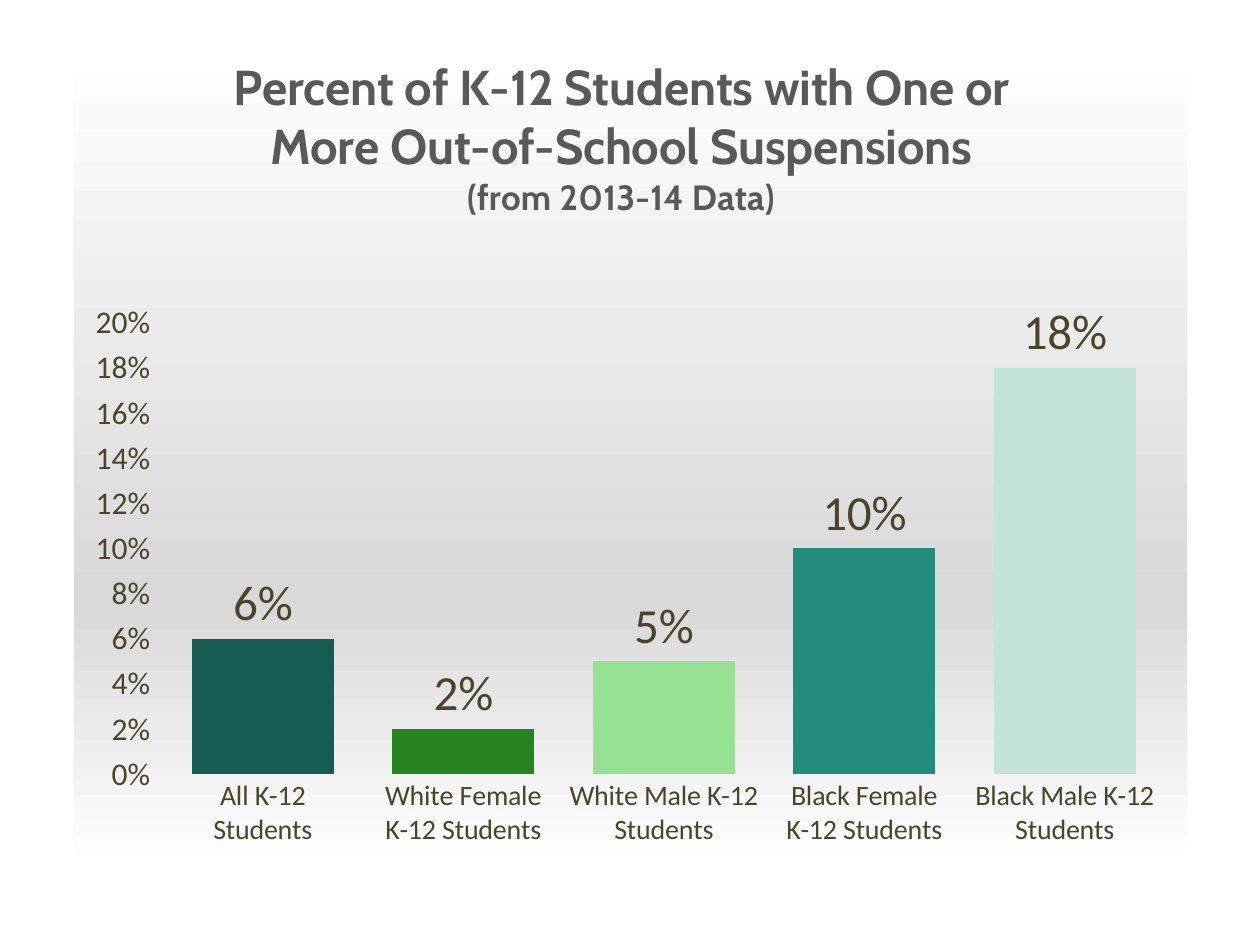
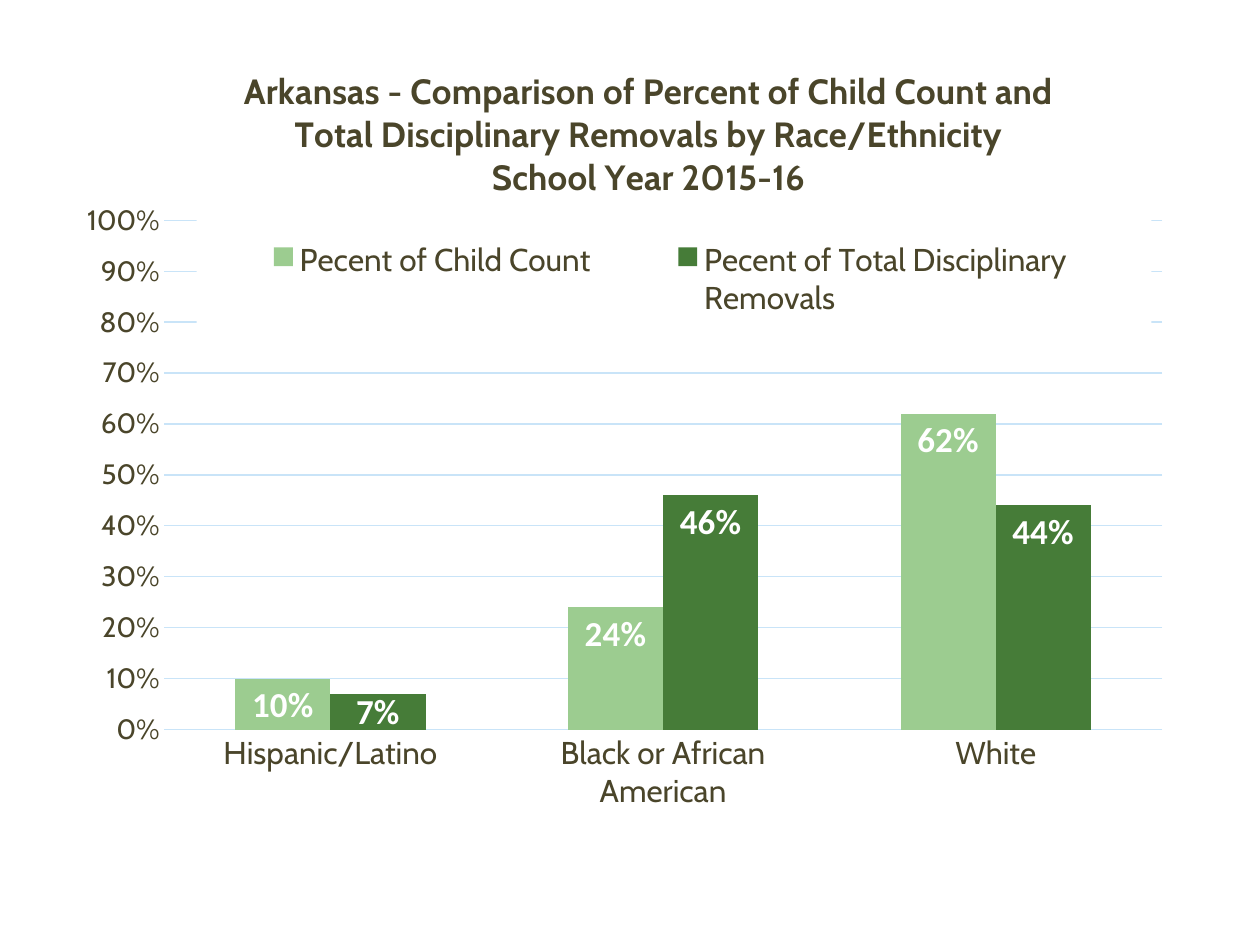
import pptx
import pptx.util
import pptx.chart.data
import pptx.dml.color
import pptx.enum.chart
import pptx.oxml
import pptx.oxml.ns

Pt = pptx.util.Pt
RGBColor = pptx.dml.color.RGBColor
LabelPosition = pptx.enum.chart.XL_LABEL_POSITION
TickMark = pptx.enum.chart.XL_TICK_MARK

WHITE = RGBColor(0xFF, 0xFF, 0xFF)
SILVER = RGBColor(0xD9, 0xD9, 0xD9)
GREY = RGBColor(0x59, 0x59, 0x59)
OLIVE = RGBColor(0x4A, 0x45, 0x2A)
PALE_BLUE = RGBColor(0xC9, 0xE4, 0xF8)
DARK_TEAL = RGBColor(0x17, 0x5C, 0x53)
GREEN = RGBColor(0x25, 0x84, 0x20)
LIGHT_GREEN = RGBColor(0x97, 0xE1, 0x94)
TEAL = RGBColor(0x22, 0x8B, 0x7C)
MINT = RGBColor(0xC2, 0xE3, 0xD5)
LEAF = RGBColor(0x9C, 0xCC, 0x90)
FOREST = RGBColor(0x46, 0x7C, 0x38)

HEADING_FONT, BODY_FONT = "Cabin", "Calibri"

SUSPENSIONS = {
    "frame": (42, 25, 636.5, 469),
    "title": [("Percent of K-12 Students with One or", 28),
              ("More Out-of-School Suspensions", 28),
              ("(from 2013-14 Data)", 20)],
    "title_color": GREY,
    "title_place": (0.14, 0.01),
    "plot_place": (0.08, 0.34, 0.9, 0.55),
    "categories": ["All K-12 Students", "White Female K-12 Students",
                   "White Male K-12 Students", "Black Female K-12 Students",
                   "Black Male K-12 Students"],
    "series": [("Series 1", [0.06, 0.02, 0.05, 0.1, 0.18], TEAL)],
    "point_colors": [DARK_TEAL, GREEN, LIGHT_GREEN, TEAL, MINT],
    "gap": 41,
    "maximum": 0.2,
    "step": 0.02,
    "value_tick": TickMark.OUTSIDE,
    "category_font": {"name": BODY_FONT, "size": Pt(16)},
    "value_font": {"name": BODY_FONT, "size": Pt(18)},
    "label_font": {"name": BODY_FONT, "size": Pt(28), "bold": False},
    "label_color": OLIVE,
    "label_position": LabelPosition.OUTSIDE_END,
    "background": [(0, WHITE), (68, SILVER), (100, WHITE)],
}

REMOVALS = {
    "frame": (49.7, 27.4, 620.6, 447.8),
    "title": [("Arkansas - Comparison of Percent of Child Count and", 20),
              ("Total Disciplinary Removals by Race/Ethnicity", 20),
              ("School Year 2015-16", 20)],
    "title_color": OLIVE,
    "title_place": (0.14, 0.02),
    "plot_place": (0.07, 0.22, 0.92, 0.65),
    "categories": ["Hispanic/Latino", "Black or African American", "White"],
    "series": [("Pecent of Child Count", [0.1, 0.24, 0.62], LEAF),
               ("Pecent of Total Disciplinary \nRemovals",
                [0.07, 0.46, 0.44], FOREST)],
    "gap": 150,
    "maximum": 1,
    "step": 0.1,
    "value_tick": TickMark.NONE,
    "grid_color": PALE_BLUE,
    "legend_place": (0.1, 0.21, 0.88, 0.17),
    "category_font": {"name": HEADING_FONT, "size": Pt(18)},
    "value_font": {"name": HEADING_FONT, "size": Pt(16)},
    "label_font": {"name": BODY_FONT, "size": Pt(20), "bold": True},
    "label_color": WHITE,
    "label_position": LabelPosition.INSIDE_END,
    "short_column": 0.08,
}


def set_font(font, color, values):
    for name, value in values.items():
        setattr(font, name, value)
    font.color.rgb = color


def fill_solid(formatting, color):
    formatting.fill.solid()
    formatting.fill.fore_color.rgb = color


def chart_xml(content):
    return pptx.oxml.parse_xml(
        f"<c:holder {pptx.oxml.ns.nsdecls('c', 'a')}>{content}</c:holder>")[0]


def place_part(element, place, index, target=""):
    """Give a chart part a layout in fractions of the chart's frame."""
    for layout in element.findall(pptx.oxml.ns.qn("c:layout")):
        element.remove(layout)
    modes = "".join(f'<c:{axis}Mode val="edge"/>' for axis in "xy")
    sizes = "".join(f'<c:{side} val="{value}"/>' for side, value in zip("xywh", place))
    element.insert(index, chart_xml(
        f"<c:layout><c:manualLayout>{target}{modes}{sizes}"
        "</c:manualLayout></c:layout>"))


def fill_behind_text(element, fill):
    """Fill a chart part that python-pptx gives no format object."""
    text_properties = element.find(pptx.oxml.ns.qn("c:txPr"))
    text_properties.addprevious(chart_xml(
        f"<c:spPr>{fill}<a:ln><a:noFill/></a:ln></c:spPr>"))


def gradient_fill(stops):
    marks = "".join(f'<a:gs pos="{percent * 1000}"><a:srgbClr val="{color}"/></a:gs>'
                    for percent, color in stops)
    return f'<a:gradFill><a:gsLst>{marks}</a:gsLst><a:lin ang="5400000" scaled="0"/></a:gradFill>'


def format_title(chart, content):
    chart.has_title = True
    frame = chart.chart_title.text_frame
    for number, (text, size) in enumerate(content["title"]):
        paragraph = frame.add_paragraph() if number else frame.paragraphs[0]
        run = paragraph.add_run()
        run.text = text
        set_font(run.font, content["title_color"],
                 {"name": HEADING_FONT, "size": Pt(size), "bold": True})
    place_part(chart.chart_title._element, content["title_place"], 1)


def format_axes(chart, content):
    values = chart.value_axis
    for axis, font in ((chart.category_axis, content["category_font"]),
                       (values, content["value_font"])):
        axis.major_tick_mark = axis.minor_tick_mark = TickMark.NONE
        axis.format.line.fill.background()
        set_font(axis.tick_labels.font, OLIVE, font)
    values.major_tick_mark = content["value_tick"]
    values.minimum_scale, values.maximum_scale = 0, content["maximum"]
    values.major_unit = content["step"]
    values.tick_labels.number_format = "0%"
    values.tick_labels.number_format_is_linked = False
    values.has_major_gridlines = "grid_color" in content
    if values.has_major_gridlines:
        line = values.major_gridlines.format.line
        line.width = Pt(0.75)
        line.color.rgb = content["grid_color"]


def format_labels(series, content):
    """Label the columns, centring the label where a column is too short."""
    labels = series.data_labels
    labels.show_value = True
    labels.number_format, labels.number_format_is_linked = "0%", False
    labels.position = content["label_position"]
    set_font(labels.font, content["label_color"], content["label_font"])
    for number, value in enumerate(series.values):
        if value < content.get("short_column", 0):
            label = series.points[number].data_label
            set_font(label.font, content["label_color"], content["label_font"])
            label.position = LabelPosition.CENTER


def format_columns(chart, content):
    plot = chart.plots[0]
    plot.gap_width, plot.overlap = content["gap"], 0
    plot.vary_by_categories = False
    for series, (_, _, color) in zip(plot.series, content["series"]):
        fill_solid(series.format, color)
        for number, point_color in enumerate(content.get("point_colors", [])):
            fill_solid(series.points[number].format, point_color)
        format_labels(series, content)


def format_legend(chart, place):
    chart.has_legend = True
    legend = chart.legend
    legend.position = pptx.enum.chart.XL_LEGEND_POSITION.BOTTOM
    legend.include_in_layout = False
    set_font(legend.font, OLIVE, {"name": HEADING_FONT, "size": Pt(18)})
    place_part(legend._element, place, 1)
    fill_behind_text(legend._element,
                     f'<a:solidFill><a:srgbClr val="{WHITE}"/></a:solidFill>')


def add_chart_slide(presentation, content):
    slide = presentation.slides.add_slide(presentation.slide_layouts[6])
    data = pptx.chart.data.CategoryChartData(number_format="0%")
    data.categories = content["categories"]
    for name, values, _ in content["series"]:
        data.add_series(name, values)
    chart = slide.shapes.add_chart(
        pptx.enum.chart.XL_CHART_TYPE.COLUMN_CLUSTERED,
        *map(Pt, content["frame"]), data).chart
    set_font(chart.font, OLIVE, {"name": HEADING_FONT, "size": Pt(10)})
    format_title(chart, content)
    format_axes(chart, content)
    format_columns(chart, content)
    chart.has_legend = False
    if "legend_place" in content:
        format_legend(chart, content["legend_place"])
    plot_area = chart._chartSpace.chart.plotArea
    place_part(plot_area, content["plot_place"], 0, '<c:layoutTarget val="inner"/>')
    if "background" in content:
        fill_behind_text(chart._chartSpace, gradient_fill(content["background"]))


def main():
    presentation = pptx.Presentation()
    presentation.slide_width, presentation.slide_height = Pt(720), Pt(540)
    for content in (SUSPENSIONS, REMOVALS):
        add_chart_slide(presentation, content)
    presentation.save("out.pptx")


if __name__ == "__main__":
    main()
